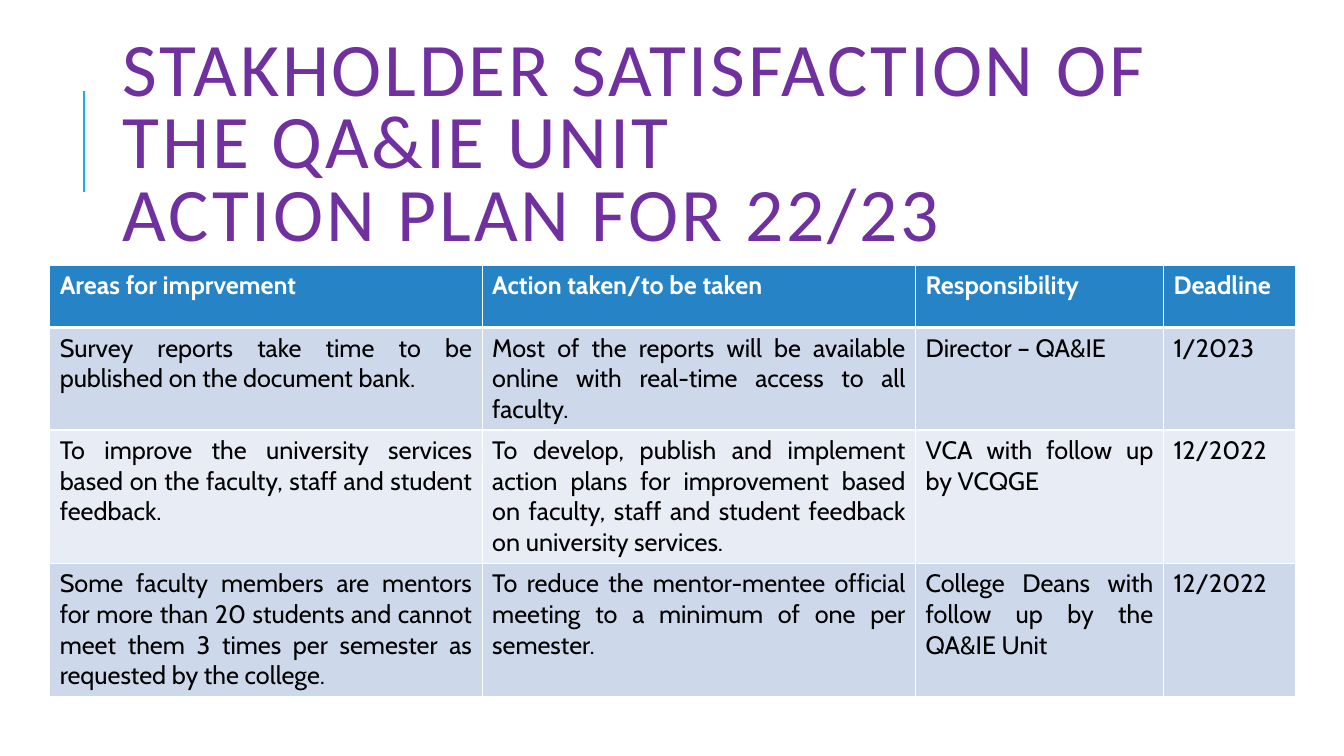
from dataclasses import dataclass

from lxml import etree
from pptx import Presentation
from pptx.dml.color import RGBColor
from pptx.enum.shapes import MSO_CONNECTOR
from pptx.enum.text import MSO_ANCHOR, MSO_AUTO_SIZE, PP_ALIGN
from pptx.oxml.ns import qn
from pptx.slide import Slide
from pptx.util import Pt

LEFT, JUSTIFY = PP_ALIGN.LEFT, PP_ALIGN.JUSTIFY
MIDDLE = MSO_ANCHOR.MIDDLE
NO_AUTOFIT = MSO_AUTO_SIZE.NONE
STRAIGHT = MSO_CONNECTOR.STRAIGHT

COLORS = {
    "title": "7030A0",
    "accent": "1CADE4",
    "header": "2683C6",
    "odd": "CDD9EA",
    "even": "E8EDF5",
    "light": "FFFFFF",
    "text": "000000",
}
TITLE_LINES = ["STAKHOLDER SATISFACTION OF THE QA&IE UNIT", "ACTION PLAN FOR 22/23"]
TITLE_FONT = {"name": "Calibri", "size": Pt(54), "bold": False}
HEADER_FONT = {"name": "Cabin", "size": Pt(18), "bold": True}
BODY_FONT = {**HEADER_FONT, "bold": False}
COLUMN_WIDTHS = [308.9, 309.6, 177.1, 94.3]
ROW_HEIGHT = 44.64
THIN, THICK = 1, 3


@dataclass
class Action:
    area: str
    action: str
    responsibility: str
    deadline: str

    def cells(self) -> list[str]:
        return [self.area, self.action, self.responsibility, self.deadline]


HEADINGS = Action("Areas for imprvement", "Action taken/to be taken", "Responsibility", "Deadline")
ACTIONS = [
    Action(
        "Survey reports take time to be published on the document bank.",
        "Most of the reports will be available online with real-time access to all faculty.",
        "Director – QA&IE",
        "1/2023",
    ),
    Action(
        "To improve the university services based on the faculty, staff and student feedback.",
        "To develop, publish and implement action plans for improvement based on faculty, "
        "staff and student feedback on university services.",
        "VCA with follow up by VCQGE",
        "12/2022",
    ),
    Action(
        "Some faculty members are mentors for more than 20 students and cannot meet them "
        "3 times per semester as requested by the college.",
        "To reduce the mentor-mentee official meeting to a minimum of one per semester.",
        "College Deans with follow up by the QA&IE Unit",
        "12/2022",
    ),
]


def rgb(key: str) -> RGBColor:
    return RGBColor.from_string(COLORS[key])


def apply_format(target, values: dict) -> None:
    for attribute, value in values.items():
        setattr(target, attribute, value)


def draw_accent(slide: Slide) -> None:
    accent = slide.shapes.add_connector(STRAIGHT, Pt(60), Pt(136.8), Pt(60), Pt(64.8))
    accent.line.color.rgb = rgb("accent")
    accent.line.width = Pt(1.5)
    etree.SubElement(accent._element.spPr, qn("a:effectLst"))


def fill_title(slide: Slide) -> None:
    heading = slide.shapes.title
    apply_format(heading, {"left": Pt(80.6), "top": Pt(46.1), "width": Pt(844.6), "height": Pt(118.1)})
    frame = heading.text_frame
    apply_format(frame, {"word_wrap": True, "auto_size": NO_AUTOFIT, "vertical_anchor": MIDDLE})
    paragraph = frame.paragraphs[0]
    apply_format(paragraph, {"alignment": LEFT, "line_spacing": 0.8})
    for index, line in enumerate(TITLE_LINES):
        if index:
            paragraph.add_line_break()
        run = paragraph.add_run()
        run.text = line
        apply_format(run.font, TITLE_FONT)
        run.font.color.rgb = rgb("title")
        run.font._element.set("spc", "200")
    # The break takes the size of the text around it
    for line_break in paragraph._p.findall(qn("a:br")):
        etree.SubElement(line_break, qn("a:rPr")).set("sz", "5400")


def add_borders(cell, top: int, bottom: int) -> None:
    properties = cell._tc.get_or_add_tcPr()
    for side, width in {"lnL": THIN, "lnR": THIN, "lnT": top, "lnB": bottom}.items():
        border = etree.SubElement(properties, qn(f"a:{side}"), w=str(Pt(width)))
        fill = etree.SubElement(border, qn("a:solidFill"))
        etree.SubElement(fill, qn("a:srgbClr"), val=COLORS["light"])


def draw_plan(slide: Slide) -> None:
    rows = [HEADINGS, *ACTIONS]
    plan = slide.shapes.add_table(
        len(rows), len(COLUMN_WIDTHS), Pt(35.5), Pt(189.4),
        Pt(sum(COLUMN_WIDTHS)), Pt(ROW_HEIGHT * len(rows)),
    ).table
    for column, width in zip(plan.columns, COLUMN_WIDTHS):
        column.width = Pt(width)
    for index, action in enumerate(rows):
        is_header = index == 0
        plan.rows[index].height = Pt(ROW_HEIGHT)
        band = "header" if is_header else "odd" if index % 2 else "even"
        for cell, wording in zip(plan.rows[index].cells, action.cells()):
            add_borders(cell, THICK if index == 1 else THIN, THICK if is_header else THIN)
            cell.fill.solid()
            cell.fill.fore_color.rgb = rgb(band)
            paragraph = cell.text_frame.paragraphs[0]
            paragraph.alignment = LEFT if is_header else JUSTIFY
            run = paragraph.add_run()
            run.text = wording
            apply_format(run.font, HEADER_FONT if is_header else BODY_FONT)
            run.font.color.rgb = rgb("light" if is_header else "text")


def main() -> None:
    deck = Presentation()
    apply_format(deck, {"slide_width": Pt(960), "slide_height": Pt(540)})
    slide = deck.slides.add_slide(deck.slide_layouts[5])
    # Accent line beside the title
    draw_accent(slide)
    # Title
    fill_title(slide)
    # Action plan table
    draw_plan(slide)
    deck.save("out.pptx")


if __name__ == "__main__":
    main()
